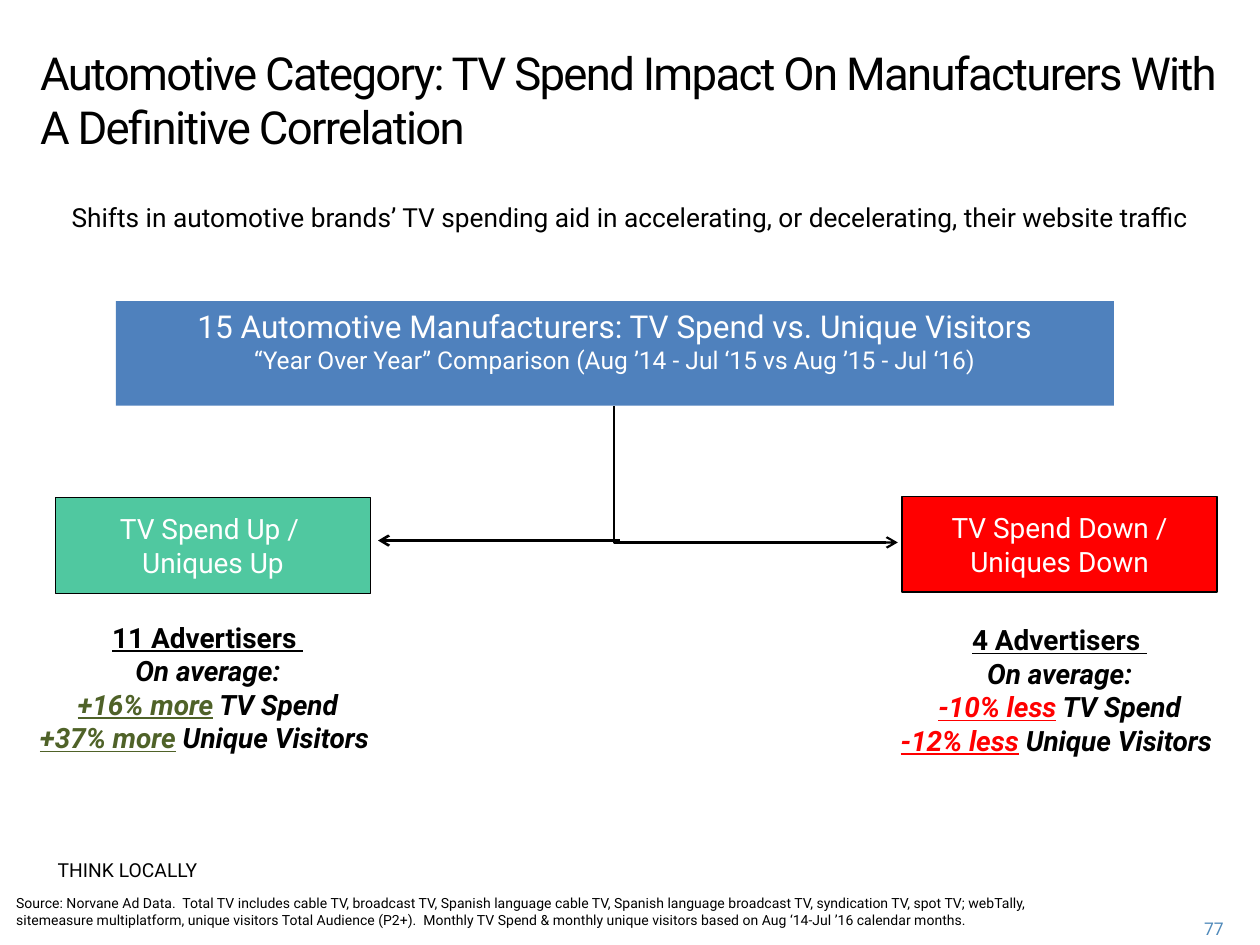
"""Build the automotive TV spend slide."""
from dataclasses import dataclass
from typing import Optional

from lxml.etree import SubElement
from pptx import Presentation
from pptx.dml.color import RGBColor
from pptx.enum.shapes import MSO_CONNECTOR, MSO_SHAPE
from pptx.enum.text import MSO_ANCHOR, PP_ALIGN
from pptx.oxml.ns import qn
from pptx.util import Pt

SCALE = 9144
FONT = "Roboto"
BLACK = RGBColor(0, 0, 0)
WHITE = RGBColor(255, 255, 255)
BLUE = RGBColor(0x4F, 0x81, 0xBD)
PALE = RGBColor(0x50, 0x8A, 0xBA)
MINT = RGBColor(0x50, 0xC8, 0xA0)
GREEN = RGBColor(0x4F, 0x62, 0x28)
RED = RGBColor(255, 0, 0)
LEFT, MID, RIGHT = PP_ALIGN.LEFT, PP_ALIGN.CENTER, PP_ALIGN.RIGHT


@dataclass(frozen=True)
class Run:
    text: str
    size: int = 16
    color: RGBColor = BLACK
    bold: bool = False
    slant: bool = False
    under: bool = False
    track: int = 0


@dataclass(frozen=True)
class Box:
    area: tuple[int, int, int, int]
    lines: list[list[Run]]
    align: PP_ALIGN = MID
    anchor: MSO_ANCHOR = MSO_ANCHOR.TOP
    fill: Optional[RGBColor] = None
    edge: bool = False


@dataclass(frozen=True)
class Link:
    kind: MSO_CONNECTOR
    ends: tuple[int, int, int, int]
    width: float


def px(values: tuple[int, ...]) -> list[int]:
    return [value * SCALE for value in values]


def stats(count: str, change: tuple[str, str], color: RGBColor) -> list[list[Run]]:
    spend, visits = change
    return [
        [Run(f"{count} Advertisers ", bold=True, under=True)],
        [Run("On average:", bold=True, slant=True)],
        [Run(spend, 16, color, True, True, True), Run(" TV Spend", bold=True, slant=True)],
        [Run(visits, 16, color, True, True, True), Run(" "),
         Run("Unique Visitors ", bold=True, slant=True)],
    ]


def draw_box(slide, box: Box) -> None:
    if box.fill is None:
        shape = slide.shapes.add_textbox(*px(box.area))
    else:
        shape = slide.shapes.add_shape(MSO_SHAPE.RECTANGLE, *px(box.area))
        shape.shadow.inherit = False
        shape.fill.solid()
        shape.fill.fore_color.rgb = box.fill
        if box.edge:
            shape.line.color.rgb = BLACK
            shape.line.width = Pt(0.75)
        else:
            shape.line.fill.background()
    frame = shape.text_frame
    frame.word_wrap = True
    frame.vertical_anchor = box.anchor
    for i, line in enumerate(box.lines):
        para = frame.add_paragraph() if i else frame.paragraphs[0]
        para.alignment = box.align
        for item in line:
            run = para.add_run()
            run.text = item.text
            font = run.font
            font.name, font.size = FONT, Pt(item.size)
            font.color.rgb = item.color
            font.bold, font.italic, font.underline = item.bold, item.slant, item.under
            if item.track:
                run._r.get_or_add_rPr().set("spc", str(item.track))


def draw_link(slide, link: Link) -> None:
    line = slide.shapes.add_connector(link.kind, *px(link.ends))
    line.line.color.rgb = BLACK
    line.line.width = Pt(link.width)
    props = line._element.spPr
    SubElement(line.line._get_or_add_ln(), qn("a:tailEnd"), type="arrow")
    SubElement(props, qn("a:effectLst"))
    if link.kind == MSO_CONNECTOR.ELBOW:
        props.find(qn("a:prstGeom")).set("prst", "bentConnector2")
        props.find(qn("a:xfrm")).set("rot", str(270 * 60000))


BOXES = [
    Box((920, 724, 61, 25), [[Run("77", 10, PALE)]], RIGHT),
    Box((92, 239, 792, 83), [
        [Run("15 Automotive Manufacturers: TV Spend vs. Unique Visitors", 18, WHITE)],
        [Run("“Year Over Year” Comparison (Aug ’14 - Jul ‘15 vs Aug ’15 - Jul ‘16)", 14, WHITE)],
    ], fill=BLUE),
    Box((44, 395, 250, 76),
        [[Run("TV Spend Up / ", color=WHITE)], [Run("Uniques Up", color=WHITE)]],
        anchor=MSO_ANCHOR.MIDDLE, fill=MINT, edge=True),
    Box((716, 394, 250, 76), [[Run("TV Spend Down / Uniques Down", color=WHITE)]],
        anchor=MSO_ANCHOR.MIDDLE, fill=RED, edge=True),
    Box((687, 489, 308, 117), stats("4", ("-10% less", "-12% less"), RED),
        anchor=MSO_ANCHOR.MIDDLE),
    Box((1, 487, 328, 117), stats("11", ("+16% more", "+37% more"), GREEN),
        anchor=MSO_ANCHOR.MIDDLE),
    Box((3, 705, 841, 37), [[Run(
        "Source: Norvane Ad Data.  Total TV includes cable TV, broadcast TV, Spanish language "
        "cable TV, Spanish language broadcast TV, syndication TV, spot TV; webTally, sitemeasure "
        "multiplatform, unique visitors Total Audience (P2+).  Monthly TV Spend & monthly unique "
        "visitors based on Aug ‘14-Jul ’16 calendar months.", 8)]], LEFT),
    Box((1, 155, 998, 35), [[Run(
        "Shifts in automotive brands’ TV spending aid in accelerating, or decelerating, "
        "their website traffic", 15)]]),
    Box((22, 41, 963, 76), [[Run(
        "Automotive Category: TV Spend Impact On Manufacturers With A Definitive Correlation",
        26, track=-100)]], LEFT, MSO_ANCHOR.MIDDLE),
    Box((36, 676, 188, 47), [[Run("THINK LOCALLY", 11)]], LEFT),
]
LINKS = [
    Link(MSO_CONNECTOR.ELBOW, (654, 264, 546, 489), 1.25),
    Link(MSO_CONNECTOR.STRAIGHT, (492, 429, 300, 429), 1.5),
]


def main() -> None:
    deck = Presentation()
    deck.slide_width, deck.slide_height = px((1000, 750))
    slide = deck.slides.add_slide(deck.slide_layouts[6])
    for box in BOXES:
        draw_box(slide, box)
    for link in LINKS:
        draw_link(slide, link)
    deck.save("out.pptx")


if __name__ == "__main__":
    main()
